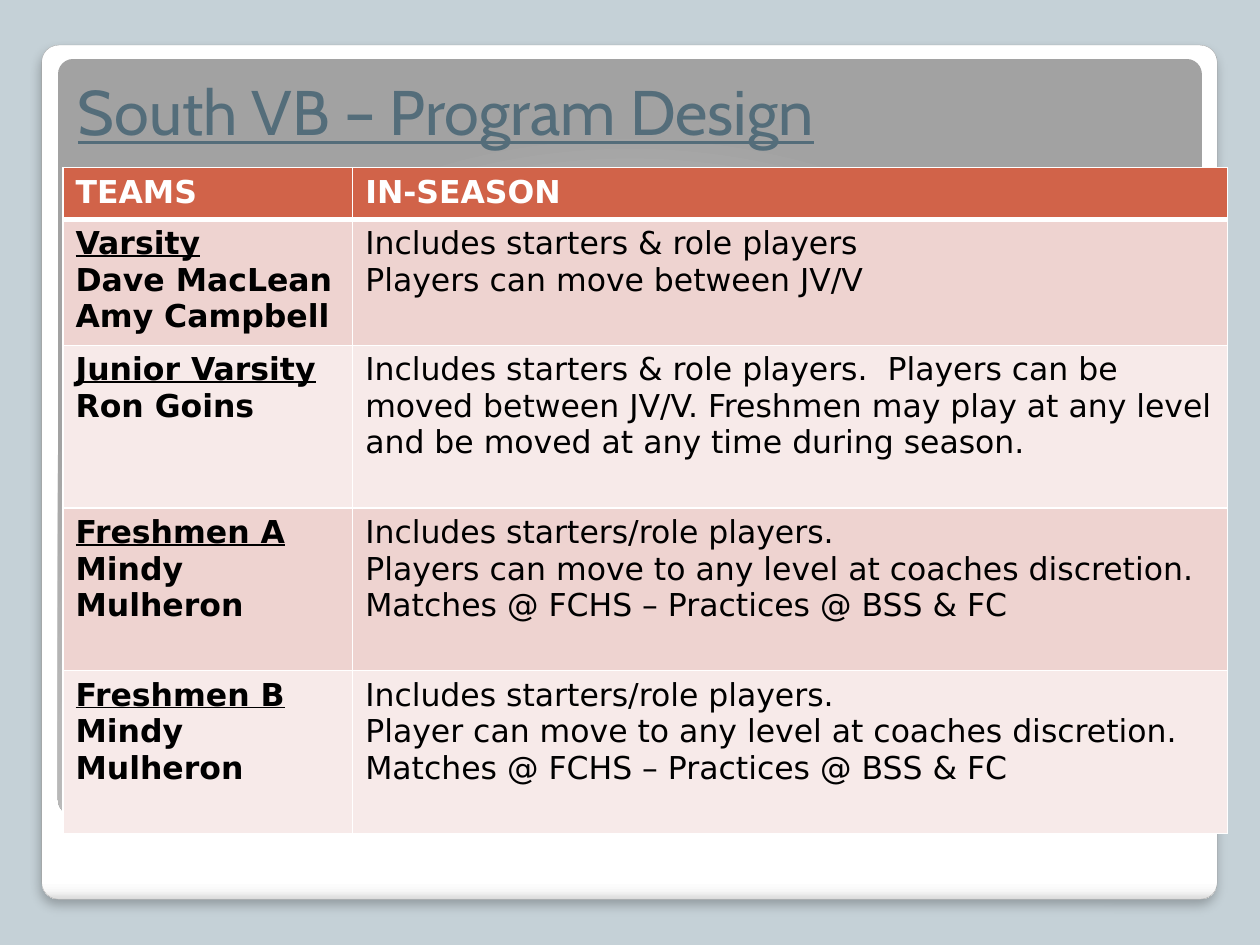
from pptx import Presentation
from pptx.dml.color import RGBColor
from pptx.enum.shapes import MSO_SHAPE as Shape
from pptx.enum.text import MSO_ANCHOR as Anchor
from pptx.oxml import parse_xml
from pptx.oxml.ns import nsdecls, qn
from pptx.util import Cm, Pt

BODY = {"name": "DejaVu Sans", "size": Pt(18)}
HEADER = ["TEAMS", "IN-SEASON"]
DISCRETION = "can move to any level at coaches discretion."
MATCHES = "Matches @ FCHS – Practices @ BSS & FC"
TEAMS = [
    (["Varsity", "Dave MacLean", "Amy Campbell"],
     ["Includes starters & role players", "Players can move between JV/V"]),
    (["Junior Varsity", "Ron Goins"],
     ["Includes starters & role players.  Players can be moved between JV/V. "
      "Freshmen may play at any level and be moved at any time during season."]),
    (["Freshmen A", "Mindy Mulheron"],
     ["Includes starters/role players.", f"Players {DISCRETION}", MATCHES]),
    (["Freshmen B", "Mindy Mulheron"],
     ["Includes starters/role players.", f"Player {DISCRETION}", MATCHES]),
]
COLUMN_WIDTHS = [5.84, 17.63]
ROW_HEIGHTS = [1.04, 2.54, 3.28, 3.28, 3.28]
BANDS = ["EED3D0", "F7EAE9"]


def rgb(value):
    """Return the colour for a hex string."""
    return RGBColor.from_string(value)


def write_line(paragraph, text, color, **formats):
    """Add one run with its colour and font formats."""
    run = paragraph.add_run()
    run.text = text
    run.font.color.rgb = rgb(color)
    for name, value in formats.items():
        setattr(run.font, name, value)


def add_panel(slide, left, top, width, height, stops, direction):
    """Add a slightly rounded panel with a gradient fill."""
    panel = slide.shapes.add_shape(
        Shape.ROUNDED_RECTANGLE, Cm(left), Cm(top), Cm(width), Cm(height))
    panel.adjustments[0] = 0.02
    panel.shadow.inherit = False
    panel.line.fill.background()
    panel.fill.background()
    marks = "".join(
        f'<a:gs pos="{percent * 1000}"><a:srgbClr val="{color}"/></a:gs>'
        for percent, color in stops)
    gradient = parse_xml(
        f'<a:gradFill {nsdecls("a")} rotWithShape="1">'
        f'<a:gsLst>{marks}</a:gsLst>{direction}</a:gradFill>')
    properties = panel.element.spPr
    properties.replace(properties.find(qn("a:noFill")), gradient)
    return panel


def add_soft_shadow(panel):
    """Give a panel a soft shadow below it."""
    panel.element.spPr.find(qn("a:effectLst")).append(parse_xml(
        f'<a:outerShdw {nsdecls("a")} blurRad="{Pt(6)}" dist="{Pt(4)}" '
        'dir="5400000" algn="t" rotWithShape="0"><a:srgbClr val="000000">'
        '<a:alpha val="25000"/></a:srgbClr></a:outerShdw>'))


def add_title(slide, text):
    """Add the underlined slide title."""
    title = slide.shapes.add_textbox(Cm(1.32), Cm(1.27), Cm(22.73), Cm(1.85))
    title.text_frame.word_wrap = True
    title.text_frame.vertical_anchor = Anchor.BOTTOM
    write_line(title.text_frame.paragraphs[0], text, "546D7A",
               name="Cabin", size=Pt(36), underline=True)


def set_borders(cell, bottom):
    """Draw white borders, with the given width at the bottom."""
    properties = cell._tc.get_or_add_tcPr()
    widths = {"L": 1, "R": 1, "T": 1, "B": bottom}
    for position, (side, width) in enumerate(widths.items()):
        properties.insert(position, parse_xml(
            f'<a:ln{side} {nsdecls("a")} w="{Pt(width)}"><a:solidFill>'
            f'<a:srgbClr val="FFFFFF"/></a:solidFill></a:ln{side}>'))


def fill_cell(cell, lines, fill, color, bold, headed=False, bottom=1):
    """Fill a cell with lines, underlining the first when headed."""
    cell.fill.solid()
    cell.fill.fore_color.rgb = rgb(fill)
    set_borders(cell, bottom)
    frame = cell.text_frame
    for index, text in enumerate(lines):
        paragraph = frame.add_paragraph() if index else frame.paragraphs[0]
        write_line(paragraph, text, color, **BODY, bold=bold,
                   underline=headed and index == 0)


def add_program_table(slide):
    """Add the table of teams and their season rules."""
    table = slide.shapes.add_table(
        len(ROW_HEIGHTS), len(COLUMN_WIDTHS), Cm(1.27), Cm(3.38),
        Cm(sum(COLUMN_WIDTHS)), Cm(sum(ROW_HEIGHTS))).table
    for column, width in zip(table.columns, COLUMN_WIDTHS):
        column.width = Cm(width)
    for row, height in zip(table.rows, ROW_HEIGHTS):
        row.height = Cm(height)
    for index, heading in enumerate(HEADER):
        fill_cell(table.cell(0, index), [heading], "D16349", "FFFFFF", True, bottom=3)
    for index, (team, rules) in enumerate(TEAMS):
        band = BANDS[index % 2]
        fill_cell(table.cell(index + 1, 0), team, band, "000000", True, headed=True)
        fill_cell(table.cell(index + 1, 1), rules, band, "000000", False)


def main():
    """Build and save the program design slide."""
    deck = Presentation()
    deck.slide_width, deck.slide_height = Cm(25.4), Cm(19.05)
    slide = deck.slides.add_slide(deck.slide_layouts[6])
    slide.background.fill.solid()
    slide.background.fill.fore_color.rgb = rgb("C5D1D7")
    card = add_panel(
        slide, 0.84, 0.91, 23.7, 17.22,
        [(0, "FFFFFF"), (98, "FFFFFF"), (99, "F7F7F7"), (100, "DADADA")],
        '<a:lin ang="5400000" scaled="0"/>')
    card.line.color.rgb = rgb("A4A4A4")
    card.line.width = Pt(0.16)
    add_soft_shadow(card)
    add_panel(
        slide, 1.17, 1.19, 23.06, 15.24,
        [(0, "FFFFFF"), (55, "E1E1E1"), (100, "A2A2A2")],
        '<a:path path="circle"><a:fillToRect l="50000" t="175000" '
        'r="50000" b="-75000"/></a:path>')
    add_title(slide, "South VB – Program Design")
    add_program_table(slide)
    deck.save("out.pptx")


if __name__ == "__main__":
    main()
